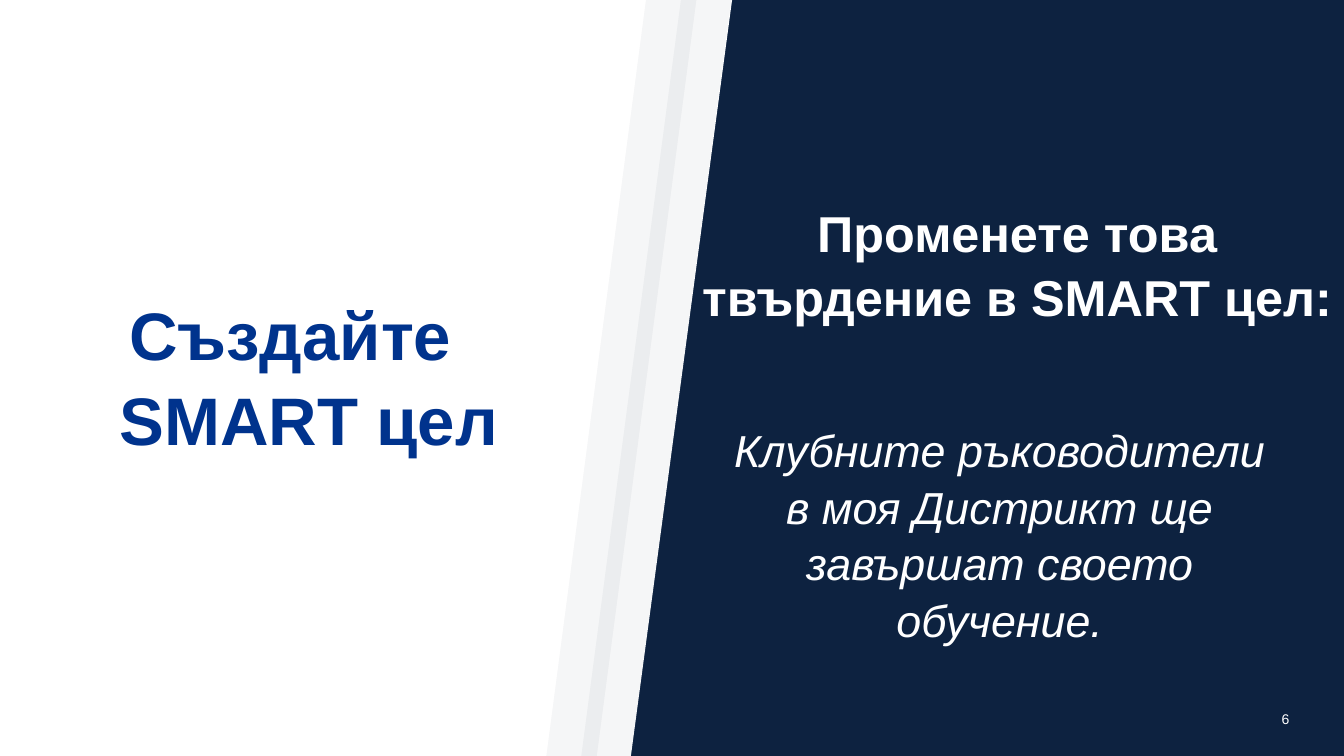
"""Build the SMART goal slide with a slanted white panel on navy."""
from lxml.etree import SubElement
from pptx import Presentation
from pptx.dml.color import RGBColor
from pptx.enum.shapes import MSO_SHAPE
from pptx.enum.text import MSO_ANCHOR, MSO_AUTO_SIZE, PP_ALIGN
from pptx.oxml.ns import qn
from pptx.util import Cm, Pt

COLORS = {"navy": "0D2240", "white": "FFFFFF", "blue": "00338D"}
WIDTH, HEIGHT = 33.87, 19.05
PANEL = [(0, 0), (18.45, 0), (15.9, HEIGHT), (0, HEIGHT)]
BAND = [(16.28, 0), (17.55, 0), (15.04, HEIGHT), (13.77, HEIGHT)]
BAND_STEP, BAND_COUNT, BAND_ALPHA = 0.88, 2, 4

TEXTS = [
    {"holder": 0, "at": (0.71, 7.32, 14.15, 4.37), "lines": ["Създайте", "SMART цел"],
     "color": "blue", "anchor": MSO_ANCHOR.BOTTOM, "align": PP_ALIGN.CENTER,
     "spacing": 1.05, "right": [0.94, 0], "inset": (0.25, 0.13),
     "font": {"size": Pt(48), "bold": True}},
    {"holder": None, "at": (32.05, 17.78, 1.82, 1.27), "lines": ["6"],
     "color": "white", "anchor": MSO_ANCHOR.TOP, "align": PP_ALIGN.LEFT,
     "spacing": 1, "right": [0], "inset": (0.25, 0.13), "font": {"size": Pt(10)}},
    {"holder": 1, "at": (17.4, 4.88, 16.47, 1.96),
     "lines": ["Променете това твърдение в SMART цел:"],
     "color": "white", "anchor": MSO_ANCHOR.TOP, "align": PP_ALIGN.CENTER,
     "spacing": 1.07, "right": [0], "inset": (0.23, 0.1),
     "font": {"size": Pt(36), "bold": True}},
    {"holder": 2, "at": (18.16, 10.46, 14.07, 5.74),
     "lines": ["Клубните ръководители в моя Дистрикт ще завършат своето обучение."],
     "color": "white", "anchor": MSO_ANCHOR.TOP, "align": PP_ALIGN.CENTER,
     "spacing": 1.05, "right": [0], "inset": (0.25, 0.13),
     "font": {"size": Pt(32), "italic": True}},
]


def paint(shape, color, alpha=None):
    shape.shadow.inherit = False
    shape.fill.solid()
    shape.fill.fore_color.rgb = RGBColor.from_string(COLORS[color])
    shape.line.fill.background()
    if alpha is not None:
        tint = shape._element.spPr.find(qn("a:solidFill"))[0]
        SubElement(tint, qn("a:alpha")).set("val", str(alpha * 1000))


def add_outline(page, points, color, shift=0, alpha=None):
    corners = [(Cm(x + shift), Cm(y)) for x, y in points]
    builder = page.shapes.build_freeform(*corners[0], scale=1)
    builder.add_line_segments(corners[1:], close=True)
    paint(builder.convert_to_shape(), color, alpha)


def add_text(page, item):
    place = [Cm(value) for value in item["at"]]
    if item["holder"] is None:
        box = page.shapes.add_textbox(*place)
    else:
        box = page.placeholders[item["holder"]]
        page.shapes._spTree.append(box._element)
    for name, value in zip(("left", "top", "width", "height"), place):
        setattr(box, name, value)
    frame = box.text_frame
    frame.word_wrap = True
    frame.auto_size = MSO_AUTO_SIZE.NONE
    frame.vertical_anchor = item["anchor"]
    side, edge = (Cm(value) for value in item["inset"])
    frame.margin_left = frame.margin_right = side
    frame.margin_top = frame.margin_bottom = edge
    for index, (line, right) in enumerate(zip(item["lines"], item["right"])):
        para = frame.add_paragraph() if index else frame.paragraphs[0]
        props = para._p.get_or_add_pPr()
        for name, value in {"marL": 0, "marR": Cm(right), "indent": 0}.items():
            props.set(name, str(int(value)))
        SubElement(props, qn("a:buNone"))
        para.alignment = item["align"]
        para.line_spacing = item["spacing"]
        para.space_before = para.space_after = Pt(0)
        span = para.add_run()
        span.text = line
        for name, value in {"name": "Arial", **item["font"]}.items():
            setattr(span.font, name, value)
        span.font.color.rgb = RGBColor.from_string(COLORS[item["color"]])


def main():
    deck = Presentation()
    deck.slide_width, deck.slide_height = Cm(WIDTH), Cm(HEIGHT)
    page = deck.slides.add_slide(deck.slide_layouts[3])
    backdrop = page.shapes.add_shape(MSO_SHAPE.RECTANGLE, 0, 0, Cm(WIDTH), Cm(HEIGHT))
    paint(backdrop, "navy")
    add_outline(page, PANEL, "white")
    for index in range(BAND_COUNT):
        add_outline(page, BAND, "navy", index * BAND_STEP, BAND_ALPHA)
    for item in TEXTS:
        add_text(page, item)
    deck.save("out.pptx")


if __name__ == "__main__":
    main()
